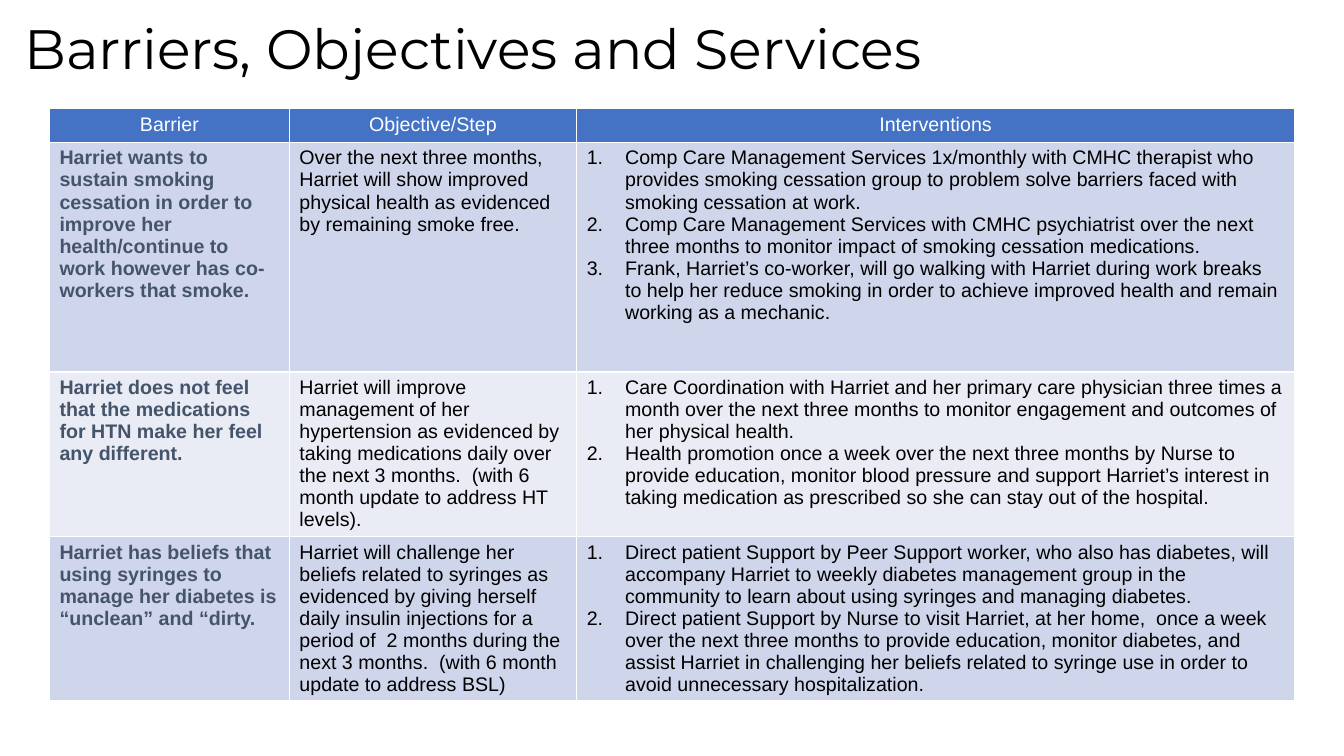
from lxml import etree
from pptx import Presentation
from pptx.dml.color import RGBColor
from pptx.enum.text import MSO_ANCHOR, PP_ALIGN
from pptx.oxml.ns import qn
from pptx.util import Inches, Pt

BLACK = RGBColor(0x00, 0x00, 0x00)
WHITE = RGBColor(0xFF, 0xFF, 0xFF)
SLATE = RGBColor(0x44, 0x54, 0x6A)
HEADER_BLUE = RGBColor(0x44, 0x72, 0xC4)
BANDS = [RGBColor(0xCF, 0xD5, 0xEA), RGBColor(0xE9, 0xEB, 0xF5)]

HEADINGS = ["Barrier", "Objective/Step", "Interventions"]
COLUMN_WIDTHS = [2.38, 2.85, 7.12]
ROW_HEIGHTS = [0.33, 2.28, 1.32, 1.47]

# Each goal: barrier, objective, interventions
GOALS = [
    ("Harriet wants to sustain smoking cessation in order to improve her "
     "health/continue to work however has co-workers that smoke.",
     "Over the next three months, Harriet will show improved physical health "
     "as evidenced by remaining smoke free.",
     ["Comp Care Management Services 1x/monthly with CMHC therapist who provides "
      "smoking cessation group to problem solve barriers faced with smoking "
      "cessation at work.",
      "Comp Care Management Services with CMHC psychiatrist over the next three "
      "months to monitor impact of smoking cessation medications.",
      "Frank, Harriet’s co-worker, will go walking with Harriet during work breaks "
      "to help her reduce smoking in order to achieve improved health and remain "
      "working as a mechanic."]),
    ("Harriet does not feel that the medications for HTN make her feel any different.",
     "Harriet will improve management of her hypertension as evidenced by taking "
     "medications daily over the next 3 months.  (with 6  month update to address "
     "HT levels).",
     ["Care Coordination with Harriet and her primary care physician three times a "
      "month over the next three months to monitor engagement and outcomes of her "
      "physical health.",
      "Health promotion once a week over the next three months by Nurse to provide "
      "education, monitor blood pressure and support Harriet’s interest in taking "
      "medication as prescribed so she can stay out of the hospital."]),
    ("Harriet has beliefs that using syringes to manage her diabetes is “unclean” "
     "and “dirty.",
     "Harriet will challenge her beliefs related to syringes as evidenced by giving "
     "herself daily insulin injections for a period of  2 months during the next "
     "3 months.  (with 6 month update to address BSL)",
     ["Direct patient Support by Peer Support worker, who also has diabetes, will "
      "accompany Harriet to weekly diabetes management group in the community to "
      "learn about using syringes and managing diabetes.",
      "Direct patient Support by Nurse to visit Harriet, at her home,  once a week "
      "over the next three months to provide education, monitor diabetes, and assist "
      "Harriet in challenging her beliefs related to syringe use in order to avoid "
      "unnecessary hospitalization."]),
]


def add_text(paragraph, text, color, bold=False, size=14, face="Arial"):
    run = paragraph.add_run()
    run.text = text
    run.font.name = face
    run.font.size = Pt(size)
    run.font.bold = bold
    run.font.color.rgb = color


def fill_cell(cell, color):
    cell.fill.solid()
    cell.fill.fore_color.rgb = color


prs = Presentation()
prs.slide_width = Inches(13.33)
prs.slide_height = Inches(7.5)
slide = prs.slides.add_slide(prs.slide_layouts[5])

# Title
title = slide.shapes.title
title.left, title.top = Inches(0.14), Inches(0.25)
title.width, title.height = Inches(10.44), Inches(0.53)
title.text_frame.vertical_anchor = MSO_ANCHOR.MIDDLE
heading = title.text_frame.paragraphs[0]
heading.alignment = PP_ALIGN.LEFT
heading.line_spacing = 0.9
add_text(heading, "Barriers, Objectives and Services", BLACK, size=39.6, face="Montserrat")

# Table grid
plan = slide.shapes.add_table(
    len(ROW_HEIGHTS), len(COLUMN_WIDTHS), Inches(0.49), Inches(1.08),
    Inches(sum(COLUMN_WIDTHS)), Inches(sum(ROW_HEIGHTS))).table
for column, width in zip(plan.columns, COLUMN_WIDTHS):
    column.width = Inches(width)
for row, height in zip(plan.rows, ROW_HEIGHTS):
    row.height = Inches(height)

# Header row
for col, label in enumerate(HEADINGS):
    cell = plan.cell(0, col)
    fill_cell(cell, HEADER_BLUE)
    label_line = cell.text_frame.paragraphs[0]
    label_line.alignment = PP_ALIGN.CENTER
    add_text(label_line, label, WHITE)

# One row per goal
for row, (barrier, objective, interventions) in enumerate(GOALS, start=1):
    cells = [plan.cell(row, col) for col in range(len(HEADINGS))]
    for cell in cells:
        fill_cell(cell, BANDS[(row - 1) % 2])
    add_text(cells[0].text_frame.paragraphs[0], barrier, SLATE, bold=True)
    add_text(cells[1].text_frame.paragraphs[0], objective, BLACK)

    # Numbered interventions with a hanging indent
    steps = cells[2].text_frame
    for number, intervention in enumerate(interventions):
        step = steps.add_paragraph() if number else steps.paragraphs[0]
        add_text(step, intervention, BLACK)
        props = step._p.get_or_add_pPr()
        props.set("marL", str(Inches(0.38)))
        props.set("indent", str(-Inches(0.38)))
        etree.SubElement(props, qn("a:buFont"), typeface="+mj-lt")
        etree.SubElement(props, qn("a:buAutoNum"), type="arabicPeriod")

prs.save("out.pptx")
